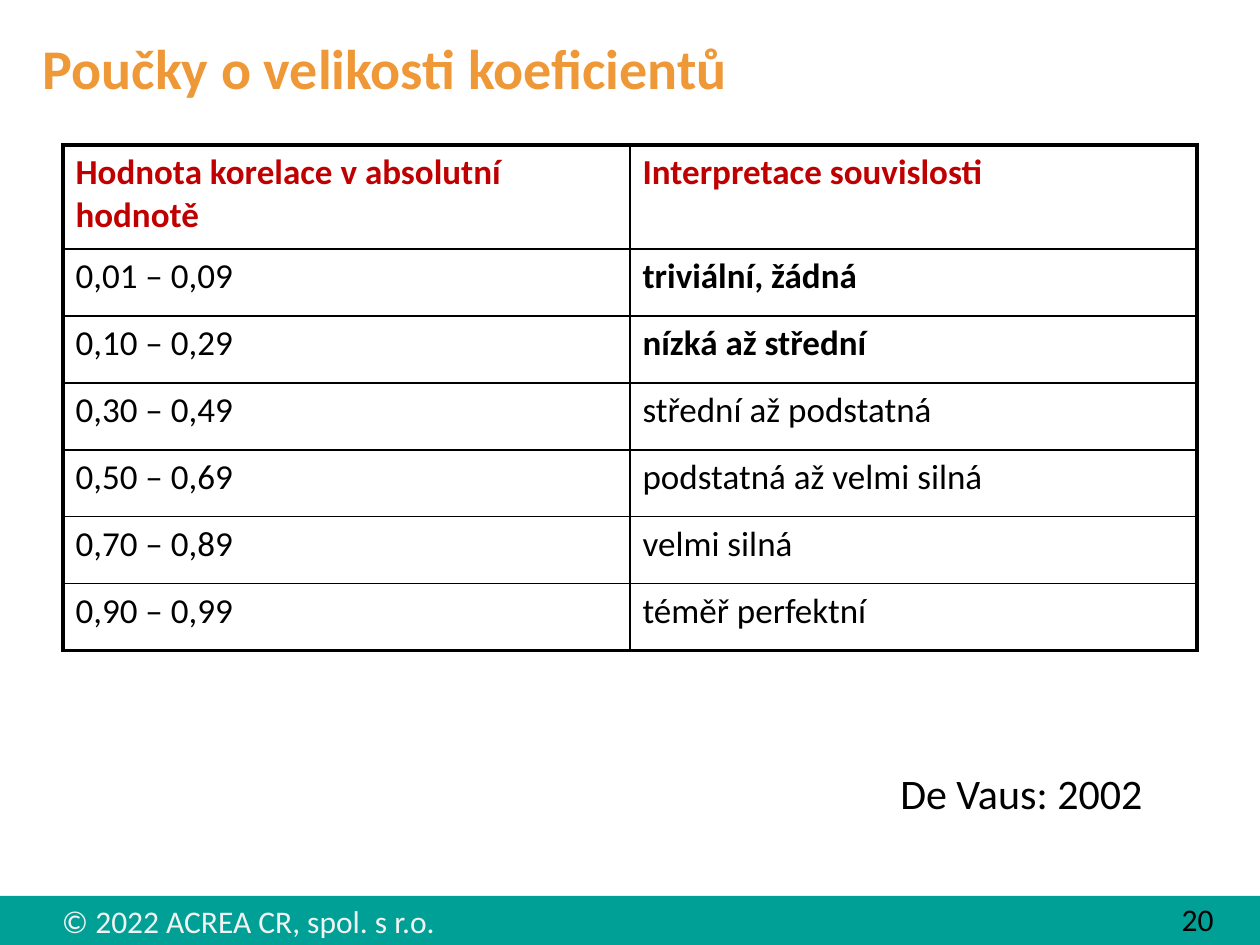
from lxml.etree import SubElement
from pptx import Presentation
from pptx.dml.color import RGBColor
from pptx.enum.shapes import MSO_SHAPE
from pptx.enum.text import MSO_ANCHOR
from pptx.oxml.ns import qn
from pptx.util import Cm, Pt

TEAL = RGBColor(0x00, 0xA0, 0x96)
ORANGE = RGBColor(0xEE, 0x98, 0x37)
RED = RGBColor(0xC0, 0x00, 0x00)
BLACK = RGBColor(0x00, 0x00, 0x00)
PALE = RGBColor(0xF2, 0xF2, 0xF2)

HEADINGS = ("Hodnota korelace v absolutní hodnotě", "Interpretace souvislosti")
INTERPRETATIONS = [
    ("0,01 – 0,09", "triviální, žádná"),
    ("0,10 – 0,29", "nízká až střední"),
    ("0,30 – 0,49", "střední až podstatná"),
    ("0,50 – 0,69", "podstatná až velmi silná"),
    ("0,70 – 0,89", "velmi silná"),
    ("0,90 – 0,99", "téměř perfektní"),
]
EMPHASISED = {"triviální, žádná", "nízká až střední"}
OUTER_LINE, INNER_LINE = 2.25, 1


def write(frame, text, size=18, color=BLACK, bold=False, anchor=None):
    frame.word_wrap = True
    if anchor is not None:
        frame.vertical_anchor = anchor
    run = frame.paragraphs[0].add_run()
    run.text = text
    run.font.name = "Calibri"
    run.font.size = Pt(size)
    run.font.bold = bold
    run.font.color.rgb = color


def add_label(slide, left, top, width, height, text, **style):
    label = slide.shapes.add_textbox(Cm(left), Cm(top), Cm(width), Cm(height))
    write(label.text_frame, text, **style)
    return label


def set_borders(cell, widths):
    properties = cell._tc.get_or_add_tcPr()
    for position, (side, width) in enumerate(widths.items()):
        line = SubElement(properties, qn(f"a:ln{side}"), w=str(Pt(width)))
        color = SubElement(SubElement(line, qn("a:solidFill")), qn("a:srgbClr"))
        color.set("val", str(BLACK))
        properties.insert(position, line)


def add_title(slide, left, top, width, height):
    title = add_label(slide, left, top, width, height, "Poučky o velikosti koeficientů",
                      size=32, color=ORANGE, bold=True, anchor=MSO_ANCHOR.MIDDLE)
    title.text_frame.margin_right = 0


def add_interpretation_table(slide, left, top, width, height):
    rows = [HEADINGS, *INTERPRETATIONS]
    last_row, last_column = len(rows) - 1, len(HEADINGS) - 1
    table = slide.shapes.add_table(len(rows), len(HEADINGS), Cm(left), Cm(top),
                                   Cm(width), Cm(height)).table
    table.first_row = table.horz_banding = False
    heading_height = 2.1
    for column in table.columns:
        column.width = Cm(width / len(HEADINGS))
    for index, row in enumerate(table.rows):
        row.height = Cm((height - heading_height) / last_row if index else heading_height)
    for r, texts in enumerate(rows):
        for c, text in enumerate(texts):
            cell = table.cell(r, c)
            cell.fill.background()
            write(cell.text_frame, text, size=20, color=BLACK if r else RED,
                  bold=r == 0 or text in EMPHASISED)
            set_borders(cell, {
                "L": OUTER_LINE if c == 0 else INNER_LINE,
                "R": OUTER_LINE if c == last_column else INNER_LINE,
                "T": OUTER_LINE if r == 0 else INNER_LINE,
                "B": OUTER_LINE if r == last_row else INNER_LINE,
            })


def add_citation(slide, left, top, width, height):
    add_label(slide, left, top, width, height, "De Vaus: 2002",
              size=24, anchor=MSO_ANCHOR.MIDDLE)


def add_footer(slide, left, top, width, height):
    band = slide.shapes.add_shape(MSO_SHAPE.RECTANGLE, Cm(left), Cm(top),
                                  Cm(width), Cm(height))
    band.shadow.inherit = False
    band.fill.solid()
    band.fill.fore_color.rgb = TEAL
    band.line.fill.background()
    add_label(slide, left + 1, top, 9.4, height, "© 2022 ACREA CR, spol. s r.o.", color=PALE)
    number_width = 1.83
    add_label(slide, left + width - number_width, top - 0.05, number_width, height, "20")


def main():
    presentation = Presentation()
    presentation.slide_width, presentation.slide_height = Cm(25.4), Cm(19.05)
    slide = presentation.slides.add_slide(presentation.slide_layouts[6])
    add_footer(slide, 0, 18.06, 25.4, 0.99)
    add_title(slide, 0.61, 0.61, 21, 1.5)
    add_interpretation_table(slide, 1.27, 2.92, 22.86, 10.2)
    add_citation(slide, 17.9, 15.4, 5.92, 1.17)
    presentation.save("out.pptx")


if __name__ == "__main__":
    main()
